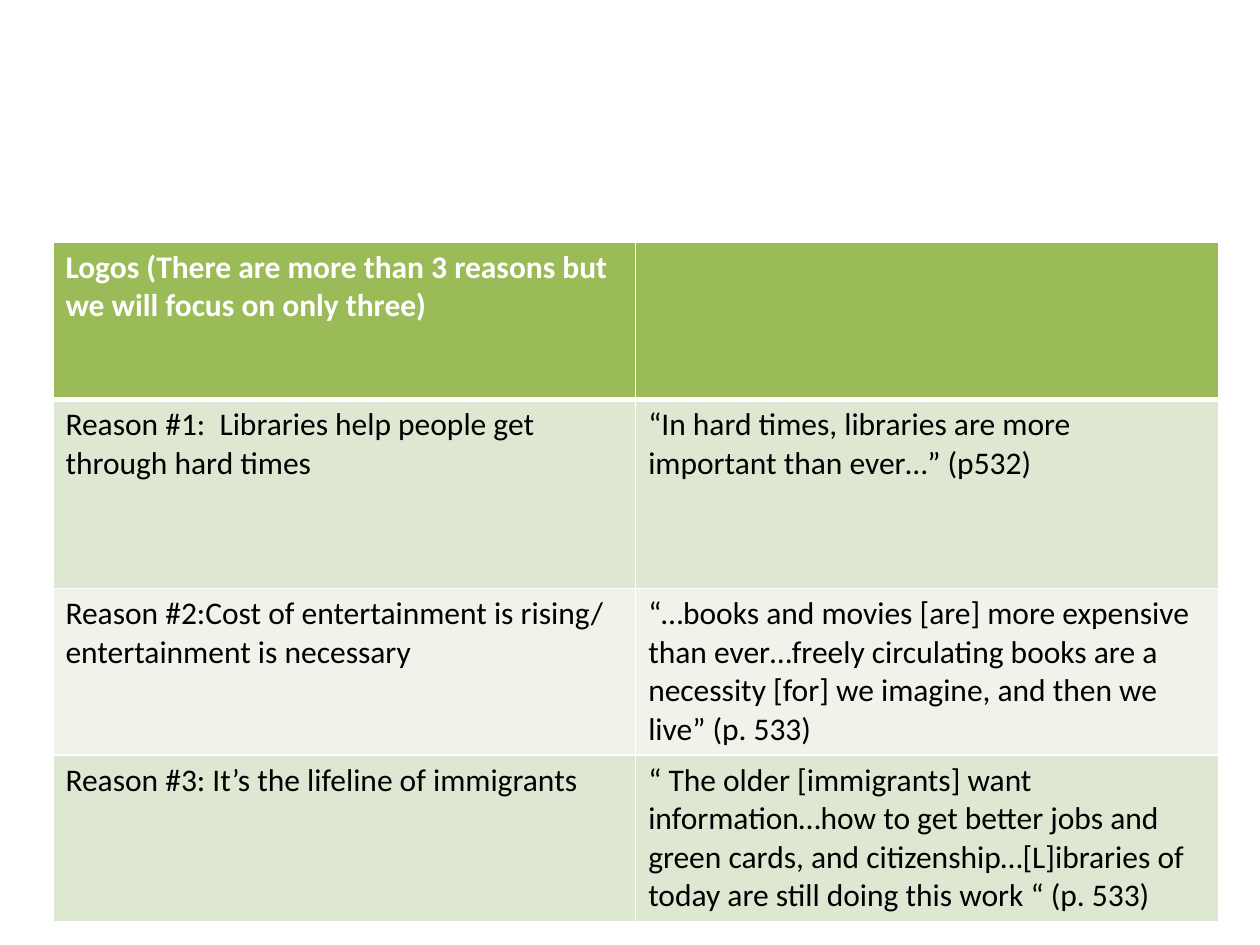
from lxml.etree import SubElement as Sub
from pptx import Presentation
from pptx.dml.color import RGBColor as RGB
from pptx.oxml.ns import qn
from pptx.util import Inches, Pt

WIDE, HIGH = Inches(10), Inches(7.5)
WHITE, BLACK = "FFFFFF", "000000"
GREEN, BANDS = "9BBB59", ("DEE7D1", "EFF3EA")
SHARES = (1.25, 1.5, 1.25, 1.25)
ROWS = (
    ("Logos (There are more than 3 reasons but we will focus on only three)", ""),
    ("Reason #1:  Libraries help people get through hard times",
     "“In hard times, libraries are more important than ever…” (p532)"),
    ("Reason #2:Cost of entertainment is rising/ entertainment is necessary",
     "“…books and movies [are] more expensive than ever…freely circulating "
     "books are a necessity [for] we imagine, and then we live” (p. 533)"),
    ("Reason #3: It’s the lifeline of immigrants",
     "“ The older [immigrants] want information…how to get better jobs and "
     "green cards, and citizenship…[L]ibraries of today are still doing "
     "this work “ (p. 533)"),
)


def paint(target, shade):
    target.solid()
    target.fore_color.rgb = RGB.from_string(shade)


def write(frame, text, size=18, face="Calibri", shade=BLACK, bold=False):
    part = frame.paragraphs[0]
    part.font.size = Pt(size)
    if text:
        run = part.add_run()
        run.text = text
        run.font.name, run.font.size, run.font.bold = face, Pt(size), bold
        paint(run.font.fill, shade)


def edge(cell, top=1, base=1):
    props = cell._tc.get_or_add_tcPr()
    for side, width in zip("LRTB", (1, 1, top, base)):
        line = Sub(props, qn(f"a:ln{side}"), w=str(Pt(width)))
        Sub(Sub(line, qn("a:solidFill")), qn("a:srgbClr"), val=WHITE)


def reasons(slide, left, top, width, height):
    grid = slide.shapes.add_table(len(ROWS), 2, left, top, width, height).table
    for row, share in zip(grid.rows, SHARES):
        row.height = int(height * share / sum(SHARES))
    for r, texts in enumerate(ROWS):
        head = r == 0
        for c, text in enumerate(texts):
            cell = grid.cell(r, c)
            edge(cell, top=3 if r == 1 else 1, base=3 if head else 1)
            paint(cell.fill, GREEN if head else BANDS[(r - 1) % 2])
            write(cell.text_frame, text, shade=WHITE if head else BLACK, bold=head)


def main():
    deck = Presentation()
    deck.slide_width, deck.slide_height = WIDE, HIGH
    slide = deck.slides.add_slide(deck.slide_layouts[6])
    reasons(slide, int(WIDE * 0.042), int(HIGH * 0.256),
            int(WIDE * 0.925), int(HIGH * 0.7))
    deck.save("out.pptx")


if __name__ == "__main__":
    main()
